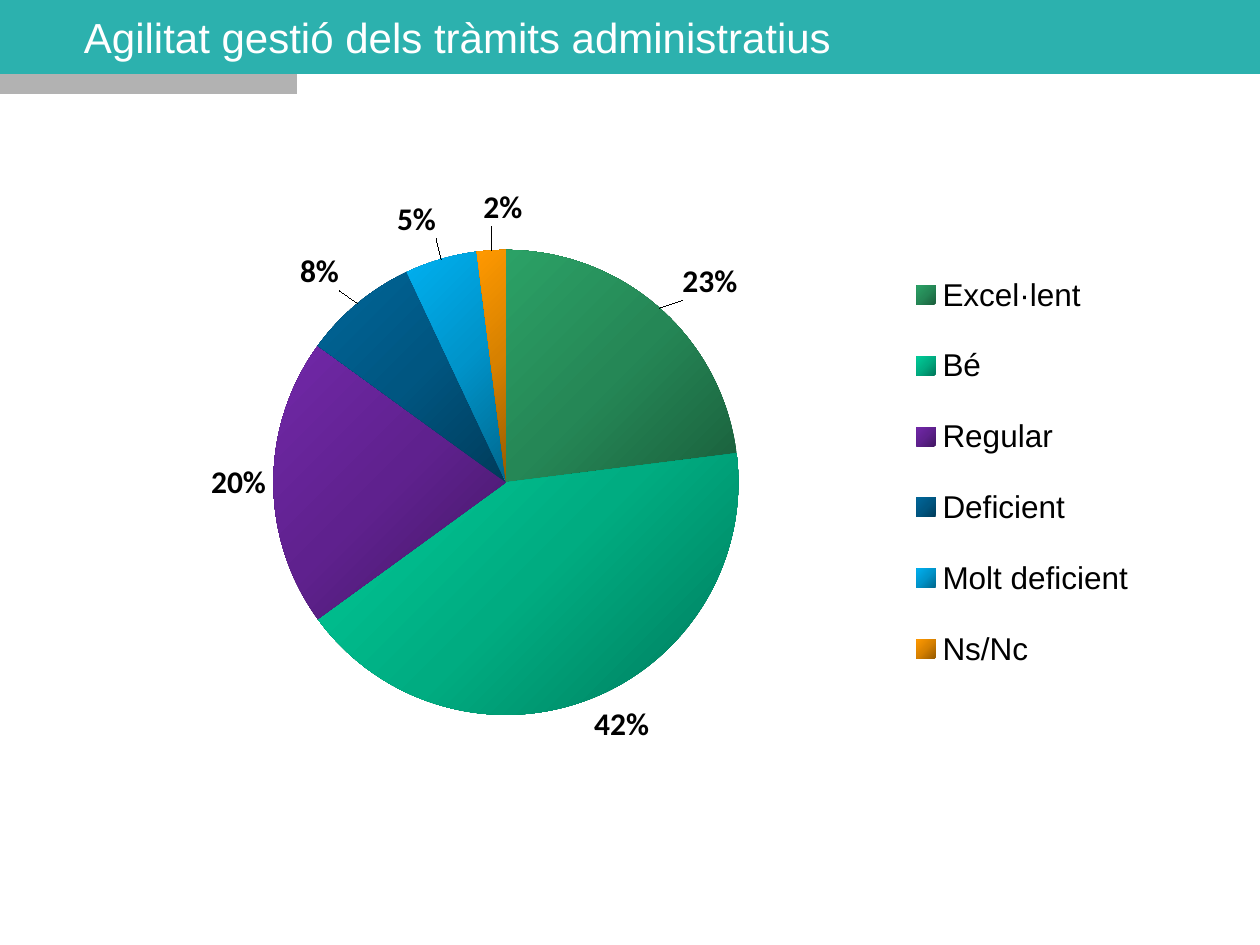
from lxml import etree
from pptx import Presentation
from pptx.chart.data import CategoryChartData
from pptx.dml.color import RGBColor
from pptx.enum.chart import XL_CHART_TYPE, XL_LABEL_POSITION, XL_LEGEND_POSITION
from pptx.enum.shapes import MSO_SHAPE
from pptx.enum.text import MSO_ANCHOR, PP_ALIGN
from pptx.oxml import parse_xml
from pptx.oxml.ns import nsdecls, qn
from pptx.util import Emu, Pt

PIE = XL_CHART_TYPE.PIE
OUTSIDE_END = XL_LABEL_POSITION.OUTSIDE_END
RIGHT = XL_LEGEND_POSITION.RIGHT
RECTANGLE = MSO_SHAPE.RECTANGLE
MIDDLE = MSO_ANCHOR.MIDDLE
LEFT = PP_ALIGN.LEFT

TEAL = RGBColor(0x2C, 0xB1, 0xAE)
GRAY = RGBColor(0xB2, 0xB2, 0xB2)
WHITE = RGBColor(0xFF, 0xFF, 0xFF)
BLACK = RGBColor(0, 0, 0)
GREEN = [RGBColor(0x1A, 0x5F, 0x3C), RGBColor(0x25, 0x87, 0x56), RGBColor(0x2B, 0xA1, 0x66)]
MINT = [RGBColor(0x00, 0x79, 0x5B), RGBColor(0x00, 0xAC, 0x81), RGBColor(0x00, 0xCC, 0x99)]
PURPLE = [RGBColor(0x43, 0x17, 0x64), RGBColor(0x5F, 0x21, 0x8E), RGBColor(0x71, 0x28, 0xA8)]
NAVY = [RGBColor(0x00, 0x3C, 0x5B), RGBColor(0x00, 0x56, 0x81), RGBColor(0x00, 0x66, 0x99)]
SKY = [RGBColor(0x00, 0x68, 0x8E), RGBColor(0x00, 0x94, 0xCA), RGBColor(0x00, 0xB0, 0xF0)]
ORANGE = [RGBColor(0x97, 0x5B, 0x00), RGBColor(0xD7, 0x81, 0x00), RGBColor(0xFF, 0x99, 0x00)]

CHART_BOX = (67, 135, 1148, 697)
ANSWERS = [
    ("Excel·lent", 23, GREEN, (18, -2)),
    ("Bé", 42, MINT, None),
    ("Regular", 20, PURPLE, None),
    ("Deficient", 8, NAVY, (-14, -7)),
    ("Molt deficient", 5, SKY, (-3, -14)),
    ("Ns/Nc", 2, ORANGE, (12, -17)),
]


def px(*lengths):
    return [Emu(round(length * 914400 / 126)) for length in lengths]


def chart_layout(x, y, size=None, inner=False):
    layout = etree.Element(qn("c:layout"))
    manual = etree.SubElement(layout, qn("c:manualLayout"))
    settings = [("layoutTarget", "inner")] if inner else []
    if size:
        settings += [("xMode", "edge"), ("yMode", "edge")]
    settings += [("x", x / CHART_BOX[2]), ("y", y / CHART_BOX[3])]
    if size:
        settings += [("w", size[0] / CHART_BOX[2]), ("h", size[1] / CHART_BOX[3])]
    for name, value in settings:
        etree.SubElement(manual, qn(f"c:{name}")).set("val", str(value))
    return layout


deck = Presentation()
deck.slide_width, deck.slide_height = px(1260, 945)
page = deck.slides.add_slide(deck.slide_layouts[5])

for bounds, color in [((0, 74, 297, 20), GRAY), ((0, 0, 1260, 74), TEAL)]:
    band = page.shapes.add_shape(RECTANGLE, *px(*bounds))
    band.shadow.inherit = False
    band.fill.solid()
    band.fill.fore_color.rgb = color
    band.line.fill.background()

title = page.shapes.title
title.left, title.top, title.width, title.height = px(84, 0, 1155, 74)
page.shapes._spTree.append(title._element)
frame = title.text_frame
frame.margin_left = frame.margin_right = frame.margin_top = frame.margin_bottom = 0
frame.vertical_anchor = MIDDLE
para = frame.paragraphs[0]
para.alignment = LEFT
span = para.add_run()
span.text = "Agilitat gestió dels tràmits administratius"
span.font.name = "Arial"
span.font.size = Pt(24)
span.font.color.rgb = WHITE

data = CategoryChartData()
data.categories = [answer[0] for answer in ANSWERS]
data.add_series("Series 1", [answer[1] for answer in ANSWERS])
chart = page.shapes.add_chart(PIE, *px(*CHART_BOX), data).chart
chart.has_title = False
chart.font.name = "Arial"
chart.font.size = Pt(18)
chart.font.color.rgb = BLACK
chart.has_legend = True
chart.legend.position = RIGHT
chart.legend.include_in_layout = False
legend = chart.legend._element
for old_layout in legend.findall(qn("c:layout")):
    legend.remove(old_layout)
legend.find(qn("c:legendPos")).addnext(chart_layout(828, 107, (255, 460)))

plot = chart.plots[0]
plot.vary_by_categories = True
plot_area = plot._element.getparent()
for old_layout in plot_area.findall(qn("c:layout")):
    plot_area.remove(old_layout)
plot_area.insert(0, chart_layout(199, 115, (480, 465), inner=True))

series = plot.series[0]
labels = series.data_labels
labels.show_value = False
labels.show_percentage = True
labels.position = OUTSIDE_END
labels.number_format = "0%"
labels.number_format_is_linked = False

for index, (name, value, shades, offset) in enumerate(ANSWERS):
    point = series.points[index]
    point.format.line.fill.background()
    stops = "".join(
        f'<a:gs pos="{place}"><a:srgbClr val="{shade}"/></a:gs>'
        for place, shade in zip((0, 50000, 100000), shades)
    )
    point.format.line._get_or_add_ln().addprevious(parse_xml(
        f'<a:gradFill {nsdecls("a")} rotWithShape="1"><a:gsLst>{stops}</a:gsLst>'
        '<a:lin ang="13500000" scaled="1"/></a:gradFill>'
    ))
    if offset:
        point.data_label.position = OUTSIDE_END
        label = labels._element.xpath(f"c:dLbl[c:idx/@val='{index}']")[0]
        label.find(qn("c:idx")).addnext(chart_layout(*offset))
        label.find(qn("c:showVal")).set("val", "0")
        label.find(qn("c:showPercent")).set("val", "1")

label_fonts = [labels.font] + [
    series.points[index].data_label.font
    for index, answer in enumerate(ANSWERS) if answer[3]
]
for font in label_fonts:
    font.name = "Calibri"
    font.size = Pt(18)
    font.bold = True
    font.color.rgb = BLACK

deck.save("out.pptx")
